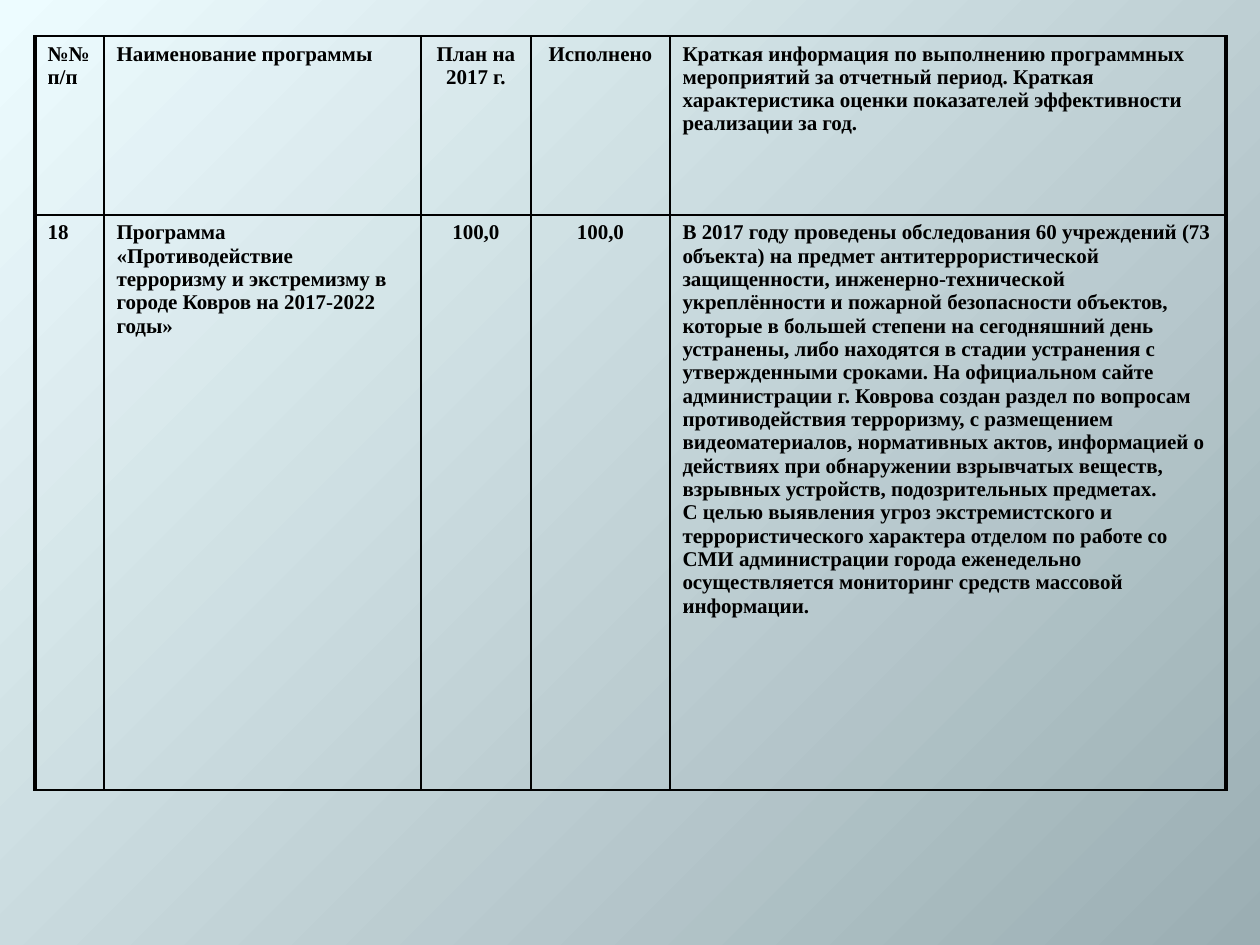
from dataclasses import dataclass

from lxml import etree
from pptx import Presentation
from pptx import util as u
from pptx.dml.color import RGBColor
from pptx.enum import text
from pptx.oxml import ns, parse_xml

PX = u.Inches(1) / 126
BLACK = RGBColor(0x00, 0x00, 0x00)
GLOW = RGBColor(0xED, 0xFC, 0xFF)
SHADE = RGBColor(0x9B, 0xAE, 0xB3)
THIN, THICK = 1, 2.25
FONT = {"name": "Times New Roman", "size": u.Pt(12), "bold": True}


@dataclass(frozen=True)
class Column:
    width: int
    header: str
    entry: str
    align: text.PP_ALIGN = text.PP_ALIGN.LEFT
    spacing: int = 20  # space before, percent of a line


COLUMNS = [
    Column(69, "№№ п/п", "18"),
    Column(317, "Наименование программы",
           "Программа\v«Противодействие терроризму и экстремизму в "
           "городе Ковров на 2017-2022 годы»"),
    Column(110, "План на 2017 г.", "100,0", text.PP_ALIGN.CENTER),
    Column(139, "Исполнено", "100,0", text.PP_ALIGN.CENTER),
    Column(556,
           "Краткая информация по выполнению программных мероприятий за отчетный "
           "период. Краткая характеристика оценки показателей эффективности "
           "реализации за год.",
           "В 2017 году проведены обследования 60 учреждений (73 объекта) на предмет "
           "антитеррористической защищенности, инженерно-технической укреплённости и "
           "пожарной безопасности объектов, которые в большей степени на сегодняшний "
           "день устранены, либо находятся в стадии устранения с утвержденными сроками. "
           "На официальном сайте администрации г. Коврова создан раздел по вопросам "
           "противодействия терроризму, с размещением видеоматериалов, нормативных "
           "актов, информацией о действиях при обнаружении взрывчатых веществ, взрывных "
           "устройств, подозрительных предметах.\n"
           "С целью выявления угроз экстремистского и террористического характера "
           "отделом по работе со СМИ администрации города еженедельно осуществляется "
           "мониторинг средств массовой информации.",
           spacing=0),
]
ROW_HEIGHTS = [179, 575]


def px(length: int) -> int:
    return round(length * PX)


def paint_background(page) -> None:
    """Radial gradient that spreads from the top left corner."""
    fill = page.background.fill
    fill.gradient()
    for stop, color in zip(fill.gradient_stops, (GLOW, SHADE)):
        stop.color.rgb = color
    gradient = page.element.find(".//" + ns.qn("a:gradFill"))
    gradient.replace(gradient.find(ns.qn("a:lin")), parse_xml(
        f'<a:path {ns.nsdecls("a")} path="circle">'
        '<a:fillToRect r="100000" b="100000"/></a:path>'))


def draw_borders(cell, widths: dict[str, float]) -> None:
    properties = cell._tc.get_or_add_tcPr()
    for side, width in widths.items():
        properties.append(parse_xml(
            f'<a:ln{side} {ns.nsdecls("a")} w="{u.Pt(width)}"><a:solidFill>'
            f'<a:srgbClr val="{BLACK}"/></a:solidFill></a:ln{side}>'))


def write_cell(cell, content: str, column: Column) -> None:
    cell.text_frame.text = content
    for para in cell.text_frame.paragraphs:
        para.alignment = column.align
        if column.spacing:
            before = etree.SubElement(para._p.get_or_add_pPr(), ns.qn("a:spcBef"))
            etree.SubElement(before, ns.qn("a:spcPct"), val=str(column.spacing * 1000))
        for span in para.runs:
            for name, value in FONT.items():
                setattr(span.font, name, value)
            span.font.color.rgb = BLACK


def add_program_table(page, left: int, top: int) -> None:
    width = sum(column.width for column in COLUMNS)
    table = page.shapes.add_table(
        len(ROW_HEIGHTS), len(COLUMNS),
        px(left), px(top), px(width), px(sum(ROW_HEIGHTS))).table
    table.first_row = table.horz_banding = False
    for row, height in zip(table.rows, ROW_HEIGHTS):
        row.height = px(height)
    last = len(COLUMNS) - 1
    for index, column in enumerate(COLUMNS):
        table.columns[index].width = px(column.width)
        borders = {"L": THICK if index == 0 else THIN,
                   "R": THICK if index == last else THIN,
                   "T": THIN, "B": THIN}
        for row_index, content in enumerate((column.header, column.entry)):
            cell = table.cell(row_index, index)
            write_cell(cell, content, column)
            draw_borders(cell, borders)
            cell.fill.background()


def main() -> None:
    deck = Presentation()
    deck.slide_width, deck.slide_height = px(1260), px(945)
    page = deck.slides.add_slide(deck.slide_layouts[6])
    paint_background(page)
    add_program_table(page, left=35, top=36)
    deck.save("out.pptx")


if __name__ == "__main__":
    main()
